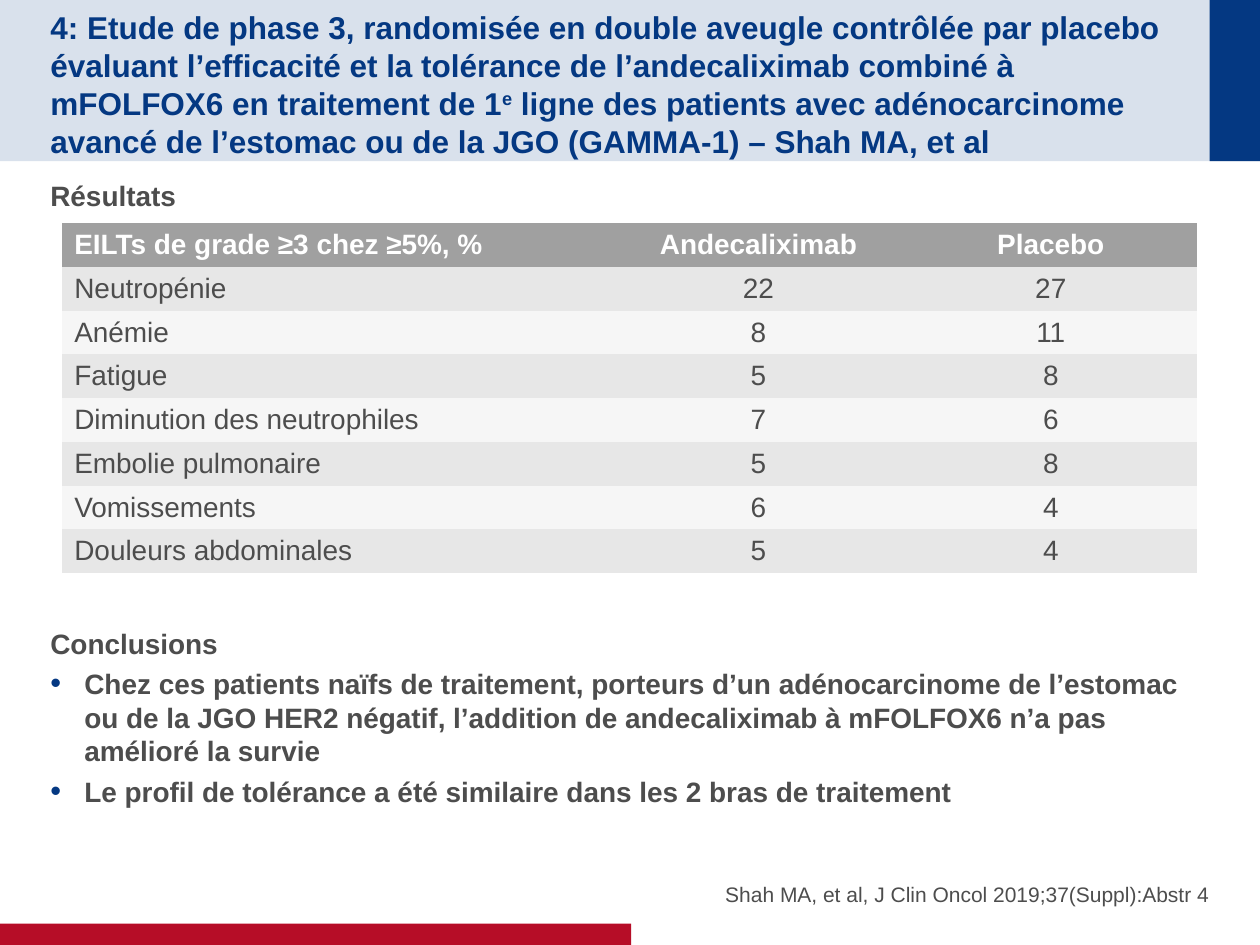
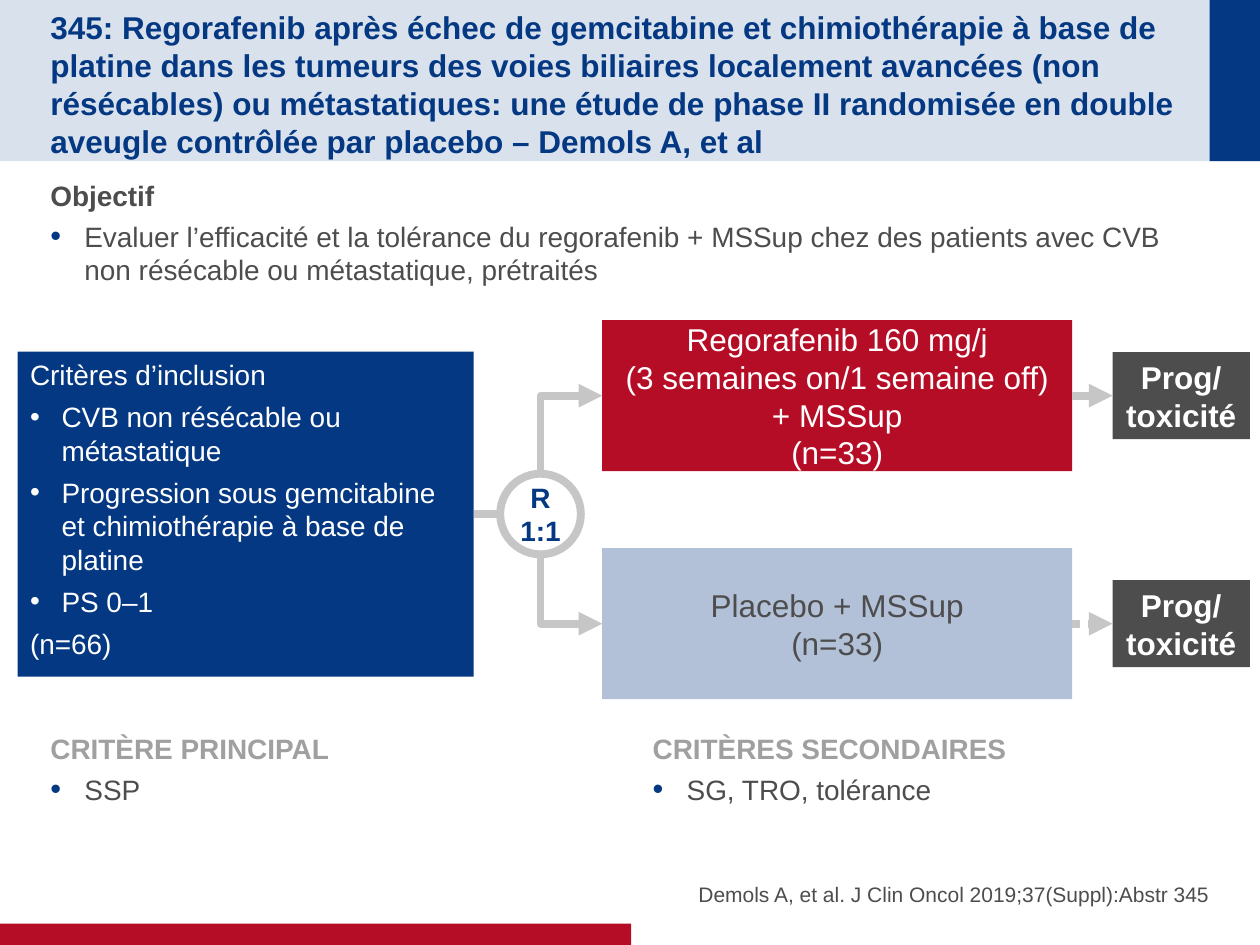
from copy import deepcopy

from lxml import etree
from pptx import Presentation
from pptx import util as u
from pptx.dml.color import RGBColor
from pptx.enum import dml, shapes, text
from pptx.oxml.ns import qn

# The slide is a grid of 100 columns by 75 rows of square cells
CELL = u.Inches(0.1)
COLUMNS, ROWS = 100, 75
MARGIN, CONTENT_WIDTH = 4, 92
BAND_HEIGHT = 12.8

NAVY = RGBColor(0x04, 0x38, 0x82)
RED = RGBColor(0xB6, 0x0D, 0x27)
PALE_BLUE = RGBColor(0xB2, 0xC0, 0xD8)
CHARCOAL = RGBColor(0x4D, 0x4D, 0x4D)
GREY = RGBColor(0xA0, 0xA0, 0xA0)
LINE_GREY = RGBColor(0xC6, 0xC6, 0xC6)
WHITE = RGBColor(0xFF, 0xFF, 0xFF)

LEFT, CENTER, RIGHT = text.PP_ALIGN.LEFT, text.PP_ALIGN.CENTER, text.PP_ALIGN.RIGHT
TOP, MIDDLE, BOTTOM = (text.MSO_ANCHOR.TOP, text.MSO_ANCHOR.MIDDLE,
                       text.MSO_ANCHOR.BOTTOM)

# Text styles: font size, colour, weight, and paragraph settings
TITLE = dict(size=18, color=NAVY, bold=True)
HEADING = dict(size=16, color=CHARCOAL, bold=True, after=4)
GREY_HEADING = {**HEADING, "color": GREY}
BULLET = dict(size=16, color=CHARCOAL, after=4, bullet=NAVY, bullet_size=110, indent=0.27)
BOLD_BULLET = {**BULLET, "bold": True}
SOURCE = dict(size=12, color=CHARCOAL, align=RIGHT)
TABLE_TEXT = dict(size=16, color=CHARCOAL)
TABLE_HEAD = dict(size=16, color=WHITE, bold=True)
CRITERION = dict(size=16, color=WHITE, after=4.8)
CRITERION_BULLET = {**CRITERION, "bullet": WHITE, "bullet_size": 100, "indent": 0.25}
ARM = dict(size=18, color=WHITE, align=CENTER)
PLACEBO_ARM = {**ARM, "color": CHARCOAL}
OUTCOME = {**ARM, "bold": True}
RATIO = dict(size=16, color=NAVY, bold=True, align=CENTER)

NO_TABLE_STYLE = "{2D5ABB26-0587-4C30-8999-92F81FD0307C}"


def cells(*lengths):
    return [u.Emu(round(length * CELL)) for length in lengths]


def tint(color, share):
    """Mix a colour with white."""
    return RGBColor(*(round(255 - share * (255 - part)) for part in color))


def set_all(target, values):
    for name, value in values.items():
        setattr(target, name, value)


# Text
def add_bullet(para, style):
    props = para._p.get_or_add_pPr()
    indent = u.Inches(style["indent"])
    props.set("marL", str(indent))
    props.set("indent", str(-indent))
    color = etree.SubElement(props, qn("a:buClr"))
    etree.SubElement(color, qn("a:srgbClr"), val=str(style["bullet"]))
    etree.SubElement(props, qn("a:buSzPct"), val=str(style["bullet_size"] * 1000))
    etree.SubElement(props, qn("a:buFont"), typeface="Arial")
    etree.SubElement(props, qn("a:buChar"), char="•")


def add_span(para, words, style, raised=False):
    span = para.add_run()
    span.text = words
    set_all(span.font, dict(name="Arial", size=u.Pt(style["size"]),
                            bold=style.get("bold", False)))
    span.font.color.rgb = style["color"]
    if raised:
        span.font._element.set("baseline", "30000")
    return span


def write_para(para, words, style):
    """Write one paragraph; a newline breaks the line, ^...^ is superscript."""
    set_all(para, dict(alignment=style.get("align", LEFT),
                       space_after=u.Pt(style.get("after", 0))))
    if "bullet" in style:
        add_bullet(para, style)
    for number, line in enumerate(words.split("\n")):
        if number:
            para.add_line_break()
        for part, piece in enumerate(line.split("^")):
            span = add_span(para, piece, style, raised=part % 2 == 1)
    for line_break in para._p.findall(qn("a:br")):
        line_break.append(deepcopy(span.font._element))


def write(frame, paras, anchor=TOP, insets=(0, 0.05, 0, 0.05), wrap=True):
    sides = ("margin_left", "margin_top", "margin_right", "margin_bottom")
    set_all(frame, dict(word_wrap=wrap, vertical_anchor=anchor))
    set_all(frame, dict(zip(sides, map(u.Inches, insets))))
    for number, (words, style) in enumerate(paras):
        para = frame.add_paragraph() if number else frame.paragraphs[0]
        write_para(para, words, style)


def add_text(page, area, paras, **layout):
    box = page.shapes.add_textbox(*cells(*area))
    write(box.text_frame, paras, **layout)


# Shapes and lines
def add_block(page, area, fill=None, kind=shapes.MSO_SHAPE.RECTANGLE):
    block = page.shapes.add_shape(kind, *cells(*area))
    block.shadow.inherit = False
    block.line.fill.background()
    if fill is None:
        block.fill.background()
    else:
        block.fill.solid()
        block.fill.fore_color.rgb = fill
    return block


def add_link(page, start, end, arrow=None, elbow=False, dotted=False):
    """Draw a thick grey line; arrow is headEnd (start) or tailEnd (end)."""
    kind = shapes.MSO_CONNECTOR.ELBOW if elbow else shapes.MSO_CONNECTOR.STRAIGHT
    link = page.shapes.add_connector(kind, *cells(*start, *end))
    props = link._element.spPr
    if elbow:
        props.find(qn("a:prstGeom")).set("prst", "bentConnector2")
    link.line.width = u.Pt(4.5)
    link.line.color.rgb = LINE_GREY
    if dotted:
        link.line.dash_style = dml.MSO_LINE.ROUND_DOT
    if arrow:
        etree.SubElement(link.line._get_or_add_ln(), qn("a:" + arrow), type="triangle")
    etree.SubElement(props, qn("a:effectLst"))
    return link


# Table
def add_results_table(page, area, widths, rows):
    frame = page.shapes.add_table(len(rows), len(widths), *cells(*area))
    table = frame.table
    table._tbl.tblPr.find(qn("a:tableStyleId")).text = NO_TABLE_STYLE
    for column, width in zip(table.columns, cells(*widths)):
        column.width = width
    for r, row in enumerate(rows):
        style = TABLE_TEXT if r else TABLE_HEAD
        fill = tint(GREY, 0.25 if r % 2 else 0.1) if r else GREY
        for c, words in enumerate(row):
            cell = table.cell(r, c)
            set_all(cell, dict(vertical_anchor=MIDDLE, margin_top=u.Inches(0.04),
                               margin_bottom=u.Inches(0.04)))
            cell.fill.solid()
            cell.fill.fore_color.rgb = fill
            write_para(cell.text_frame.paragraphs[0], words,
                       {**style, "align": CENTER if c else LEFT})


# Shared frame: title band, corner block, footer bar, source
def add_page(deck, title, source):
    page = deck.slides.add_slide(deck.slide_layouts[6])
    add_block(page, (0, 0, COLUMNS, BAND_HEIGHT), tint(NAVY, 0.15))
    add_block(page, (COLUMNS - MARGIN, 0, MARGIN, BAND_HEIGHT), NAVY)
    add_block(page, (0, ROWS - 1.7, 50.1, 1.7), RED)
    add_text(page, (MARGIN, 2, 90.1, 8.8), [(title, TITLE)], anchor=MIDDLE,
             insets=(0, 0.05, 0, 0))
    add_text(page, (50.8, 66.7, 45.2, 5.3), [(source, SOURCE)], anchor=BOTTOM,
             insets=(0, 0, 0, 0))
    return page


def build_results(deck):
    page = add_page(
        deck,
        "4: Etude de phase 3, randomisée en double aveugle contrôlée par placebo "
        "évaluant l’efficacité et la tolérance de l’andecaliximab combiné à mFOLFOX6 "
        "en traitement de 1^e^ ligne des patients avec adénocarcinome avancé de "
        "l’estomac ou de la JGO (GAMMA-1) – Shah MA, et al",
        "Shah MA, et al, J Clin Oncol 2019;37(Suppl):Abstr 4")
    add_text(page, (MARGIN, 13.7, CONTENT_WIDTH, 4), [("Résultats", HEADING)])
    add_results_table(page, (4.9, 17.7, 90.1, 27.8), (43.7, 23.2, 23.2), [
        ("EILTs de grade ≥3 chez ≥5%, %", "Andecaliximab", "Placebo"),
        ("Neutropénie", "22", "27"),
        ("Anémie", "8", "11"),
        ("Fatigue", "5", "8"),
        ("Diminution des neutrophiles", "7", "6"),
        ("Embolie pulmonaire", "5", "8"),
        ("Vomissements", "6", "4"),
        ("Douleurs abdominales", "5", "4"),
    ])
    add_text(page, (MARGIN, 49.2, CONTENT_WIDTH, 16.4), [
        ("Conclusions", HEADING),
        ("Chez ces patients naïfs de traitement, porteurs d’un adénocarcinome de "
         "l’estomac ou de la JGO HER2 négatif, l’addition de andecaliximab à mFOLFOX6 "
         "n’a pas amélioré la survie", BOLD_BULLET),
        ("Le profil de tolérance a été similaire dans les 2 bras de traitement",
         BOLD_BULLET),
    ])


def build_design(deck):
    page = add_page(
        deck,
        "345: Regorafenib après échec de gemcitabine et chimiothérapie à base de "
        "platine dans les tumeurs des voies biliaires localement avancées (non "
        "résécables) ou métastatiques: une étude de phase II randomisée en double "
        "aveugle contrôlée par placebo – Demols A, et al",
        "Demols A, et al. J Clin Oncol 2019;37(Suppl):Abstr 345")
    add_text(page, (MARGIN, 13.7, CONTENT_WIDTH, 10), [
        ("Objectif", HEADING),
        ("Evaluer l’efficacité et la tolérance du regorafenib + MSSup chez des patients "
         "avec CVB non résécable ou métastatique, prétraités", BULLET),
    ])

    # Inclusion criteria and randomisation
    inclusion = add_block(page, (1.4, 27.9, 36.2, 25.8), NAVY)
    write(inclusion.text_frame, [
        ("Critères d’inclusion", CRITERION),
        ("CVB non résécable ou métastatique", CRITERION_BULLET),
        ("Progression sous gemcitabine et chimiothérapie à base de platine",
         CRITERION_BULLET),
        ("PS 0–1", CRITERION_BULLET),
        ("(n=66)", CRITERION),
    ], insets=(0.1, 0.05, 0.1, 0.05))
    center_x, center_y, radius = 42.9, 40.8, 3.2
    circle = add_block(page, (center_x - radius, center_y - radius, 2 * radius, 2 * radius),
                       kind=shapes.MSO_SHAPE.OVAL)
    circle.line.width = u.Pt(4.5)
    circle.line.color.rgb = LINE_GREY
    write(circle.text_frame, [("R\n1:1", RATIO)], anchor=MIDDLE, wrap=False)
    entry = add_link(page, (37.6, center_y), (center_x - radius, center_y))
    entry.begin_connect(inclusion, 3)

    # Treatment arms, each leading to its outcome
    arm_x, arm_width, arm_height = 47.8, 37.3, 12
    outcome_x, outcome_height = 88.3, 6.9
    arms = [
        (31.4, -radius, RED, ARM, False,
         "Regorafenib 160 mg/j\n(3 semaines on/1 semaine off) + MSSup\n(n=33)"),
        (49.5, radius, PALE_BLUE, PLACEBO_ARM, True, "Placebo + MSSup\n(n=33)"),
    ]
    for middle, rim, fill, style, dotted, words in arms:
        arm = add_block(page, (arm_x, middle - arm_height / 2, arm_width, arm_height), fill)
        outcome = add_block(page, (outcome_x, middle - outcome_height / 2, 10.9,
                                   outcome_height), CHARCOAL)
        for block, label, look in ((arm, words, style),
                                   (outcome, "Prog/\ntoxicité", OUTCOME)):
            write(block.text_frame, [(label, look)], anchor=MIDDLE, insets=(0.1, 0, 0.1, 0))
        add_link(page, (arm_x, middle), (center_x, center_y + rim),
                 arrow="headEnd", elbow=True)
        exit_link = add_link(page, (arm_x + arm_width, middle), (outcome_x, middle),
                             arrow="tailEnd", dotted=dotted)
        exit_link.begin_connect(arm, 3)
        exit_link.end_connect(outcome, 1)

    # Endpoints
    endpoints = [(MARGIN, "CRITÈRE PRINCIPAL", "SSP"),
                 (51.8, "CRITÈRES SECONDAIRES", "SG, TRO, tolérance")]
    for left, heading, measure in endpoints:
        add_text(page, (left, 57.6, 44.2, 8.2),
                 [(heading, GREY_HEADING), (measure, BULLET)])


def main():
    deck = Presentation()
    deck.slide_width, deck.slide_height = cells(COLUMNS, ROWS)
    build_results(deck)
    build_design(deck)
    deck.save("out.pptx")


if __name__ == "__main__":
    main()
